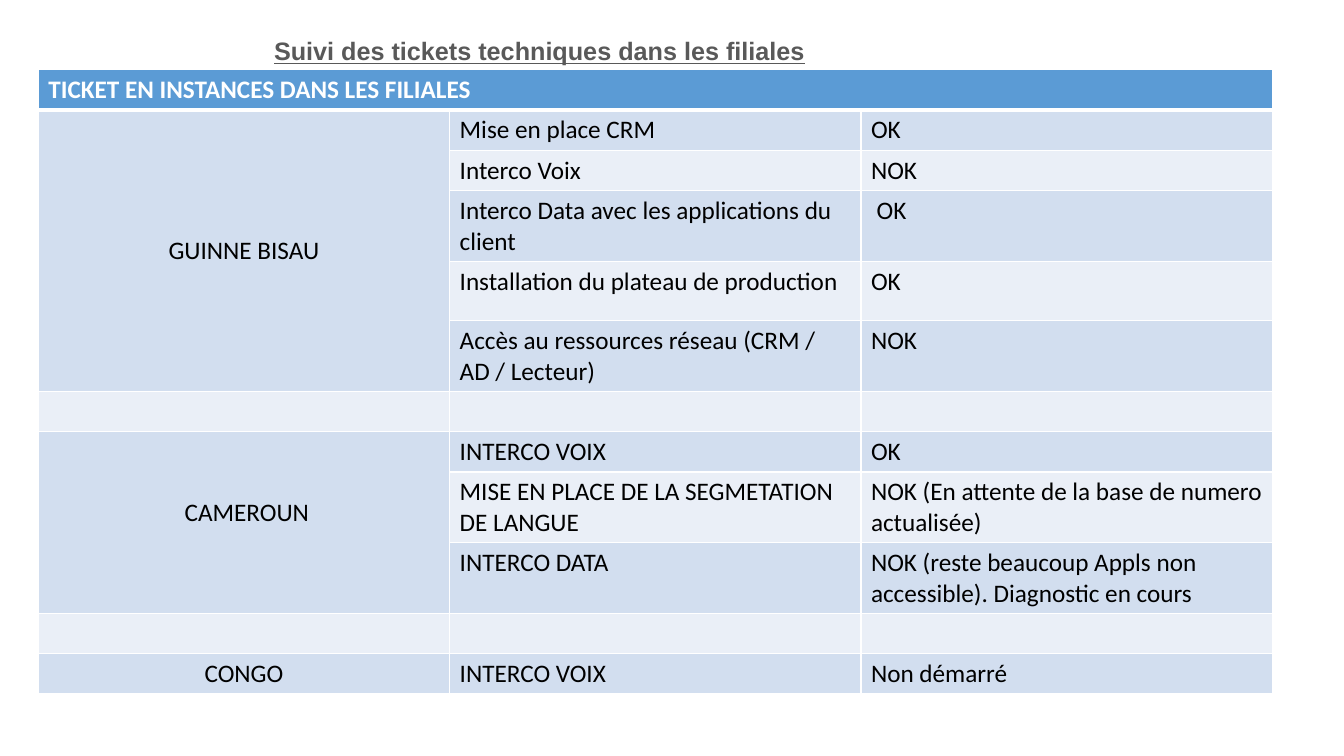
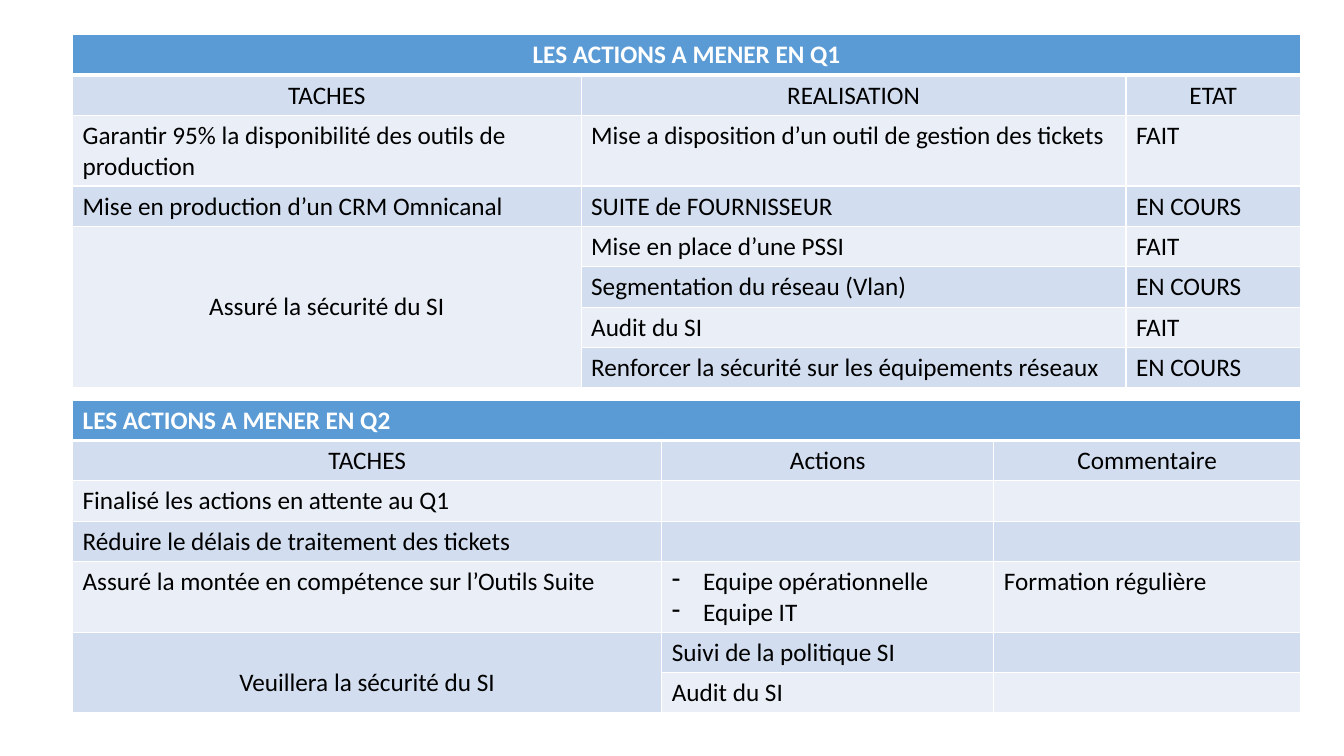
from lxml import etree
from pptx import Presentation
from pptx.dml.color import RGBColor
from pptx.enum.text import MSO_ANCHOR, PP_ALIGN
from pptx.oxml.ns import qn
from pptx.util import Inches, Pt

WHITE = RGBColor(0xFF, 0xFF, 0xFF)
BLACK = RGBColor(0x00, 0x00, 0x00)
GRAY = RGBColor(0x59, 0x59, 0x59)
BLUE = RGBColor(0x5B, 0x9B, 0xD5)
BAND_DARK = RGBColor(0xD2, 0xDE, 0xEF)
BAND_LIGHT = RGBColor(0xEA, 0xEF, 0xF7)

deck = Presentation()
deck.slide_width = Inches(13.33)
deck.slide_height = Inches(7.5)
COL = deck.slide_width / 100
ROW = deck.slide_height / 100
PADDING = Inches(0.1)
LINE = Inches(0.3)


def draw_borders(cell, bottom):
    properties = cell._tc.get_or_add_tcPr()
    for side, points in (("L", 1), ("R", 1), ("T", 1), ("B", bottom)):
        line = etree.SubElement(properties, qn(f"a:ln{side}"), w=str(Pt(points)))
        fill = etree.SubElement(line, qn("a:solidFill"))
        etree.SubElement(fill, qn("a:srgbClr"), val=str(WHITE))


def add_tracking_table(slide, left, top, width, shares, lines, rows, centred):
    """Fill a banded table; None joins a cell to the one above, row 0 is the heading."""
    table = slide.shapes.add_table(
        len(rows), len(shares), int(left * COL), int(top * ROW), int(width * COL),
        int(sum(PADDING + LINE * count for count in lines))).table
    for column, share in zip(table.columns, shares):
        column.width = int(width * COL * share / sum(shares))
    for row, count in zip(table.rows, lines):
        row.height = int(PADDING + LINE * count)
    for r, texts in enumerate(rows):
        heading = r == 0
        for c in range(len(shares)):
            cell = table.cell(r, c)
            draw_borders(cell, 3 if heading else 1)
            cell.fill.solid()
            cell.fill.fore_color.rgb = BLUE if heading else (BAND_LIGHT, BAND_DARK)[r % 2]
            cell.text_frame.text = (texts[c] or "") if c < len(texts) else ""
            for paragraph in cell.text_frame.paragraphs:
                if (r, c) in centred:
                    paragraph.alignment = PP_ALIGN.CENTER
                for run in paragraph.runs:
                    run.font.name = "Calibri"
                    run.font.size = Pt(18)
                    run.font.bold = heading
                    run.font.color.rgb = WHITE if heading else BLACK
    table.cell(0, 0).merge(table.cell(0, len(shares) - 1))
    for r, texts in enumerate(rows):
        last = r
        while last + 1 < len(rows) and rows[last + 1][0] is None:
            last += 1
        if last > r and texts[0] is not None:
            table.cell(r, 0).merge(table.cell(last, 0))
            table.cell(r, 0).vertical_anchor = MSO_ANCHOR.MIDDLE
    return table


# Tickets in the subsidiaries
blank = deck.slide_layouts[6]
tickets_slide = deck.slides.add_slide(blank)
title = tickets_slide.shapes.add_textbox(
    int(19.65 * COL), int(4 * ROW), int(41.4 * COL), int(5.33 * ROW)).text_frame
title.word_wrap = False
title.vertical_anchor = MSO_ANCHOR.MIDDLE
title.text = "Suivi des tickets techniques dans les filiales"
title.paragraphs[0].alignment = PP_ALIGN.JUSTIFY
title_font = title.paragraphs[0].runs[0].font
title_font.name = "Arial"
title_font.size = Pt(18)
title_font.bold = True
title_font.underline = True
title_font.color.rgb = GRAY

tickets = add_tracking_table(
    tickets_slide, 2.85, 9.2, 91.82, (1, 1, 1),
    (1, 1, 1, 2, 1.63, 2, 1, 1, 2, 2, 1, 1),
    [
        ("TICKET EN INSTANCES DANS LES FILIALES",),
        ("GUINNE BISAU", "Mise en place CRM", "OK"),
        (None, "Interco Voix", "NOK"),
        (None, "Interco Data avec les applications du client", " OK"),
        (None, "Installation du plateau de production", "OK"),
        (None, "Accès au ressources réseau (CRM / AD / Lecteur)", "NOK"),
        ("", "", ""),
        (" CAMEROUN", "INTERCO VOIX", "OK"),
        (None, "MISE EN PLACE DE LA SEGMETATION DE LANGUE",
         "NOK (En attente de la base de numero actualisée)"),
        (None, "INTERCO DATA",
         "NOK (reste beaucoup Appls non accessible). Diagnostic en cours"),
        ("", "", ""),
        ("CONGO", "INTERCO VOIX", "Non démarré"),
    ],
    {(1, 0), (7, 0), (11, 0)})
tickets.cell(7, 0).margin_bottom = Inches(0.23)

# Actions for the first two quarters
actions_slide = deck.slides.add_slide(blank)
add_tracking_table(
    actions_slide, 5.4, 4.6, 91.37, (5.04, 5.4, 1.73),
    (1, 1, 2, 1, 1, 1, 1, 1),
    [
        ("LES ACTIONS A MENER EN Q1",),
        ("TACHES", "REALISATION", "ETAT"),
        ("Garantir 95% la disponibilité des outils de production",
         "Mise a disposition d’un outil de gestion des tickets", "FAIT"),
        ("Mise en production d’un CRM Omnicanal", "SUITE de FOURNISSEUR", "EN COURS"),
        ("Assuré la sécurité du SI", "Mise en place d’une PSSI", "FAIT"),
        (None, "Segmentation du réseau (Vlan)", "EN COURS"),
        (None, "Audit du SI", "FAIT"),
        (None, "Renforcer la sécurité sur les équipements réseaux", "EN COURS"),
    ],
    {(0, 0), (1, 0), (1, 1), (1, 2), (4, 0)})

second_quarter = add_tracking_table(
    actions_slide, 5.4, 52.93, 91.37, (5.84, 3.29, 3.04),
    (1, 1, 1, 1, 2, 1, 1),
    [
        ("LES ACTIONS A MENER EN Q2",),
        ("TACHES", "Actions", "Commentaire"),
        ("Finalisé les actions en attente au Q1", "", ""),
        ("Réduire le délais de traitement des tickets", "", ""),
        ("Assuré la montée en compétence sur l’Outils Suite",
         "Equipe opérationnelle\nEquipe IT", "Formation régulière"),
        ("Veuillera la sécurité du SI", "Suivi de la politique SI", ""),
        (None, "Audit du SI", ""),
    ],
    {(1, 0), (1, 1), (1, 2), (5, 0)})
second_quarter.cell(5, 0).margin_top = Inches(0.25)
for team in second_quarter.cell(4, 1).text_frame.paragraphs:
    team_properties = team._p.get_or_add_pPr()
    team_properties.set("marL", str(Inches(0.31)))
    team_properties.set("indent", str(-Inches(0.31)))
    etree.SubElement(team_properties, qn("a:buChar"), char="-")

deck.save("out.pptx")
